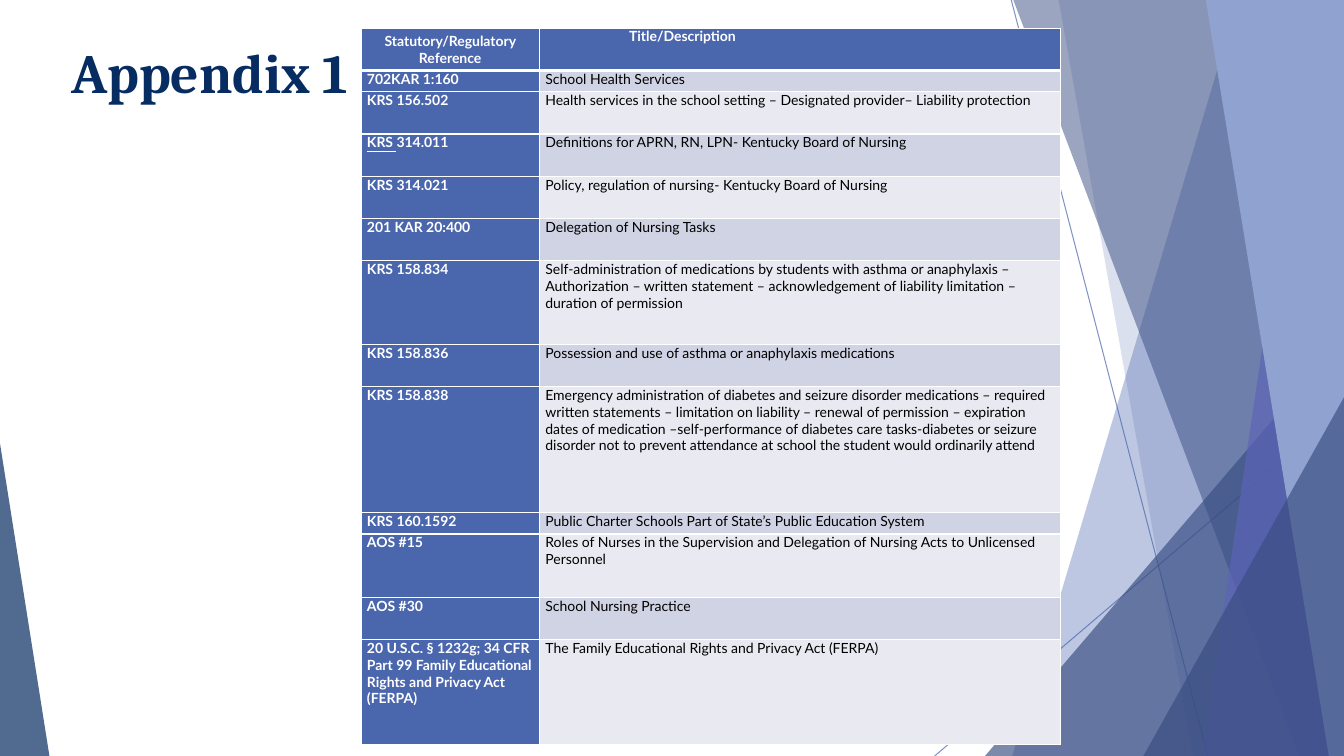
"""Build the Appendix 1 slide: a table of school health statutes beside angular facets."""
from lxml import etree
from pptx import Presentation
from pptx import util as u
from pptx.dml.color import RGBColor
from pptx.enum import shapes, text
from pptx.oxml import ns

COLOURS = {
    "blue": "4A66AC", "dark": "384C81", "violet": "5C64B7", "light": "90A2CF",
    "navy": "072C62", "white": "FFFFFF", "black": "000000",
    "odd": "D0D3E3", "even": "E9EAF1",
}


def paint(fill, colour, alpha=100):
    fill.solid()
    fill.fore_color.rgb = RGBColor.from_string(COLOURS[colour])
    if alpha < 100:
        tint = fill._xPr.find(".//" + ns.qn("a:srgbClr"))
        etree.SubElement(tint, ns.qn("a:alpha"), val=str(alpha * 1000))


def add_span(para, words, size, font, colour, bold):
    span = para.add_run()
    span.text = words
    span.font.size = u.Pt(size)
    span.font.name = font
    span.font.bold = bold
    span.font.color.rgb = RGBColor.from_string(COLOURS[colour])
    return span


deck = Presentation()
deck.slide_width = u.Inches(13.33)
deck.slide_height = u.Inches(7.5)
page = deck.slides.add_slide(deck.slide_layouts[6])

for ends in [(10.03, 0, 11.98, 7.5), (13.33, 4.04, 9.27, 7.5)]:
    line = page.shapes.add_connector(shapes.MSO_CONNECTOR.STRAIGHT, *map(u.Inches, ends))
    line.line.width = u.Pt(0.75)
    paint(line.line.fill, "blue", 70)
    etree.SubElement(line._element.spPr, ns.qn("a:effectLst"))

# Bands give top-left and bottom-left x; triangles give a box and the apex position.
facets = [
    ("band", (12.28, 10.04), "blue", 36),
    ("band", (10.5, 11.83), "blue", 20),
    ("triangle", (9.77, 3.34, 3.56, 4.16, 1), "dark", 66),
    ("band", (10.05, 12.89), "dark", 50),
    ("band", (13.03, 11.92), "violet", 70),
    ("band", (11.96, 13.18), "light", 100),
    ("triangle", (11.34, 3.94, 1.99, 3.56, 1), "dark", 66),
    ("triangle", (0, 4.4, 0.49, 3.1, 0), "navy", 70),
]
for kind, place, colour, alpha in facets:
    if kind == "band":
        top_x, bottom_x = map(u.Inches, place)
        outline = page.shapes.build_freeform(top_x, 0)
        outline.add_line_segments([
            (deck.slide_width, 0), (deck.slide_width, deck.slide_height),
            (bottom_x, deck.slide_height)])
        facet = outline.convert_to_shape()
    else:
        facet = page.shapes.add_shape(
            shapes.MSO_SHAPE.ISOSCELES_TRIANGLE, *map(u.Inches, place[:4]))
        facet.adjustments[0] = place[4]
    facet.shadow.inherit = False
    facet.line.fill.background()
    paint(facet.fill, colour, alpha)

title = page.shapes.add_textbox(*map(u.Inches, (0.61, 0.28, 9.4, 1.44)))
title.text_frame.word_wrap = True
title.text_frame.margin_top = u.Inches(0.1)
add_span(title.text_frame.paragraphs[0], "Appendix 1", 39.6, "Cambria", "navy", True)

rows = [
    (0.42, ["Statutory/Regulatory Reference"], "Title/Description"),
    (0.21, ["702KAR 1:160"], "School Health Services"),
    (0.42, ["KRS 156.502"],
     "Health services in the school setting – Designated provider– Liability protection"),
    (0.42, ["KRS ", "314.011"], "Definitions for APRN, RN, LPN- Kentucky Board of Nursing"),
    (0.42, ["KRS 314.021"], "Policy, regulation of nursing- Kentucky Board of Nursing"),
    (0.42, ["201 KAR 20:400"], "Delegation of Nursing Tasks"),
    (0.83, ["KRS 158.834"],
     "Self-administration of medications by students with asthma or anaphylaxis – "
     "Authorization – written statement – acknowledgement of liability limitation – "
     "duration of permission"),
    (0.42, ["KRS 158.836"], "Possession and use of asthma or anaphylaxis medications"),
    (1.25, ["KRS 158.838"],
     "Emergency administration of diabetes and seizure disorder medications – required "
     "written statements – limitation on liability – renewal of permission – expiration "
     "dates of medication –self-performance of diabetes care tasks-diabetes or seizure "
     "disorder not to prevent attendance at school the student would ordinarily attend"),
    (0.21, ["KRS 160.1592"], "Public Charter Schools Part of State’s Public Education System"),
    (0.63, ["AOS #15"],
     "Roles of Nurses in the Supervision and Delegation of Nursing Acts to Unlicensed Personnel"),
    (0.42, ["AOS #30"], "School Nursing Practice"),
    (1.04, ["20 U.S.C. § 1232g; 34 CFR Part 99 Family Educational Rights and Privacy Act (FERPA)"],
     "The Family Educational Rights and Privacy Act (FERPA)"),
]
table = page.shapes.add_table(
    len(rows), 2, *map(u.Inches, (3.58, 0.28, 6.94, 7.09))).table
for column, width in zip(table.columns, (1.77, 5.17)):
    column.width = u.Inches(width)

for r, (height, reference, description) in enumerate(rows):
    table.rows[r].height = u.Inches(height)
    for c, words in enumerate((reference, [description])):
        cell = table.cell(r, c)
        cell.margin_left = cell.margin_right = u.Inches(0.06)
        cell.margin_top = cell.margin_bottom = 0
        heading = r == 0 or c == 0
        for side in ("lnL", "lnR", "lnT", "lnB"):
            thick = (r, side) in ((0, "lnB"), (1, "lnT"))
            border = etree.SubElement(
                cell._tc.get_or_add_tcPr(), ns.qn("a:" + side), w=str(u.Pt(3 if thick else 1)))
            ink = etree.SubElement(border, ns.qn("a:solidFill"))
            etree.SubElement(ink, ns.qn("a:srgbClr"), val=COLOURS["white"])
        paint(cell.fill, "blue" if heading else "odd" if r % 2 else "even")
        para = cell.text_frame.paragraphs[0]
        for part in words:
            span = add_span(para, part, 10, "Lato", "white" if heading else "black", heading)
            span.font.underline = part == "KRS "

table.cell(0, 0).vertical_anchor = text.MSO_ANCHOR.MIDDLE
table.cell(0, 0).text_frame.paragraphs[0].alignment = text.PP_ALIGN.CENTER
indent = table.cell(0, 1).text_frame.paragraphs[0]._p.get_or_add_pPr()
indent.set("marL", str(u.Inches(0.83)))

deck.save("out.pptx")
